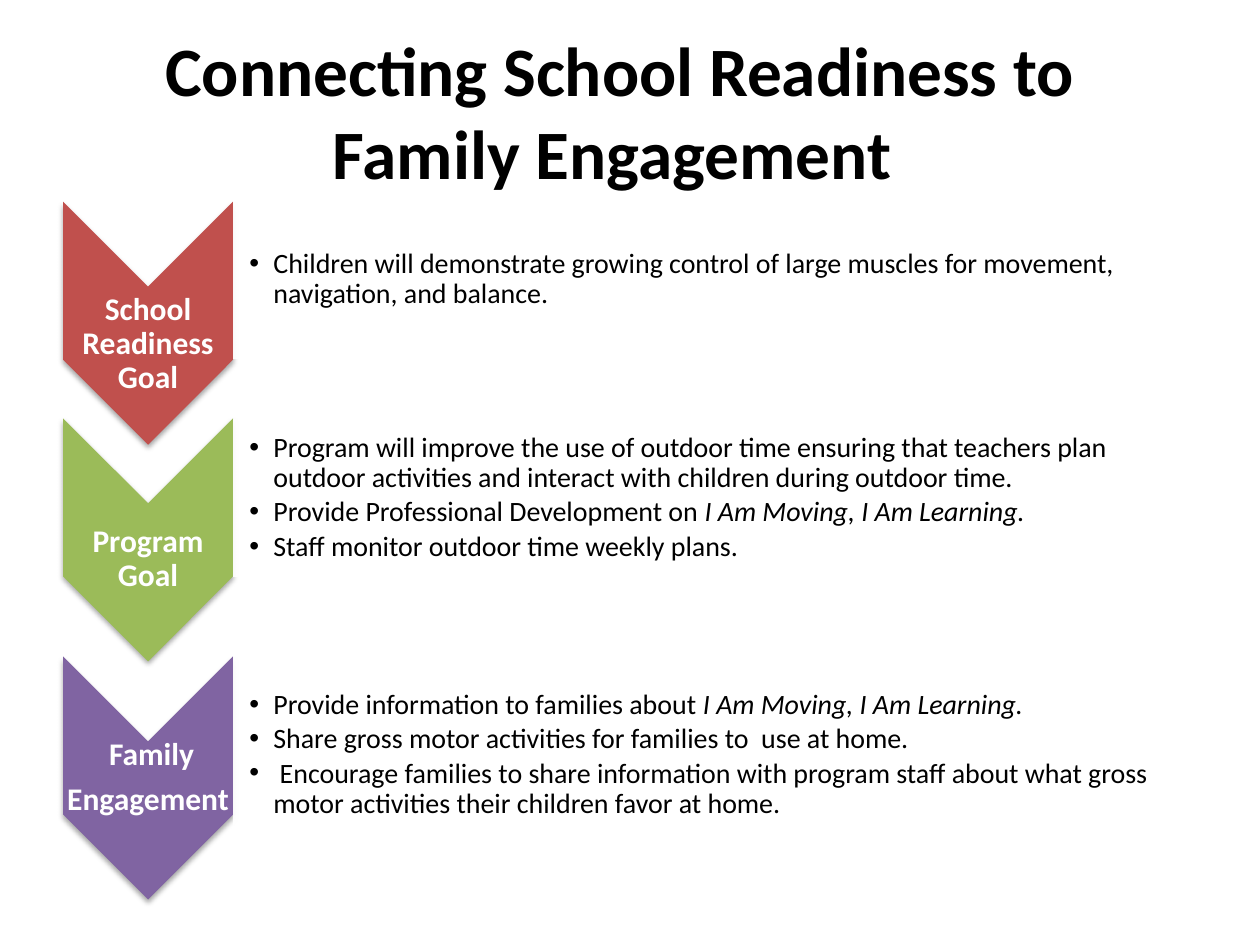
import pptx
import pptx.util
from dataclasses import dataclass
from lxml import etree
from pptx.dml.color import RGBColor
from pptx.enum.shapes import MSO_SHAPE
from pptx.enum.text import MSO_ANCHOR, MSO_AUTO_SIZE, PP_ALIGN
from pptx.oxml.ns import qn

Inches, Pt = pptx.util.Inches, pptx.util.Pt


@dataclass(frozen=True)
class Theme:
    font: str = "Calibri"
    ink: str = "000000"
    label_ink: str = "FFFFFF"
    panel: str = "FFFFFF"
    title: float = 39.6
    label: float = 18
    body: float = 16


THEME = Theme()
TITLE = "Connecting School Readiness to Family Engagement "
PROGRAM = ("I Am Moving, I Am Learning.", True)

# Each bullet is a list of (text, italic) runs; positions are in inches.
STEPS = [
    dict(color="C0504D", top=1.6, label_mid=2.73,
         panel_mid=2.22, panel_h=1.26, list_drop=0,
         label=["School Readiness Goal"],
         bullets=[[("Children will demonstrate growing control of large muscles "
                    "for movement, navigation, and balance.", False)]]),
    dict(color="9BBB59", top=3.32, label_mid=4.44,
         panel_mid=3.95, panel_h=1.26, list_drop=0,
         label=["Program Goal"],
         bullets=[[("Program will improve the use of outdoor time ensuring that "
                    "teachers plan outdoor activities and interact with children "
                    "during outdoor time.", False)],
                  [("Provide Professional Development on ", False), PROGRAM],
                  [("Staff monitor outdoor time weekly plans.", False)]]),
    dict(color="8064A2", top=5.21, label_mid=6.17,
         panel_mid=5.84, panel_h=1.57, list_drop=0.3,
         label=[" Family", "Engagement"],
         bullets=[[("Provide information to families about ", False), PROGRAM],
                  [("Share gross motor activities for families to  use at home.",
                    False)],
                  [(" Encourage families to share information with program staff "
                    "about what gross motor activities their children favor at "
                    "home.", False)]]),
]

LEFT, ARROW_W, ARROW_H = 0.5, 1.35, 1.93
PANEL_LEFT, PANEL_W = LEFT + ARROW_W, 7.4
LIST_W, PANEL_PAD = 7.34, 0.14
LABEL_H = 0.85
INDENT, INSET, LIST_INSET = 0.19, 0.01, 0.13


def place(shape, left, top, width, height):
    shape.left, shape.top = Inches(left), Inches(top)
    shape.width, shape.height = Inches(width), Inches(height)


def prepare_frame(shape, left_inset=INSET, top_inset=INSET):
    tf = shape.text_frame
    tf.word_wrap = True
    tf.auto_size = MSO_AUTO_SIZE.NONE
    tf.vertical_anchor = MSO_ANCHOR.MIDDLE
    tf.margin_left, tf.margin_top = Inches(left_inset), Inches(top_inset)
    tf.margin_right = tf.margin_bottom = Inches(INSET)
    return tf


def add_run(p, text, size, color, bold=False, italic=False):
    r = p.add_run()
    r.text = text
    r.font.name, r.font.size = THEME.font, Pt(size)
    r.font.bold, r.font.italic = bold, italic
    r.font.color.rgb = RGBColor.from_string(color)


def add_paragraph(tf, index, gap):
    """Start a tightly spaced paragraph, with gap points above all but the first."""
    p = tf.paragraphs[0] if index == 0 else tf.add_paragraph()
    p.line_spacing = 0.9
    p.space_before = Pt(gap if index else 0)
    p.space_after = Pt(0)
    return p


def add_bullet(p):
    pPr = p._p.get_or_add_pPr()
    pPr.set("marL", str(Inches(INDENT)))
    pPr.set("indent", str(-Inches(INDENT)))
    etree.SubElement(pPr, qn("a:buFont")).set("typeface", "Arial")
    etree.SubElement(pPr, qn("a:buChar")).set("char", "•")


def add_soft_shadow(shape):
    effects = shape._element.spPr.find(qn("a:effectLst"))
    shadow = etree.SubElement(effects, qn("a:outerShdw"), blurRad=str(Pt(3.1)),
                              dist=str(Pt(1.8)), dir="5400000", rotWithShape="0")
    color = etree.SubElement(shadow, qn("a:srgbClr"), val="000000")
    etree.SubElement(color, qn("a:alpha"), val="35000")


def add_turned_shape(s, kind, left, top, width, height, color):
    """Add a shape turned a quarter clockwise that covers the given area."""
    shift = (height - width) / 2
    shape = s.shapes.add_shape(kind, Inches(left - shift), Inches(top + shift),
                               Inches(height), Inches(width))
    shape.rotation = 90
    shape.fill.solid()
    shape.fill.fore_color.rgb = RGBColor.from_string(color)
    shape.line.fill.background()
    shape.shadow.inherit = False
    return shape


def add_label(s, step):
    box = s.shapes.add_textbox(0, 0, 0, 0)
    place(box, LEFT, step["label_mid"] - LABEL_H / 2, ARROW_W, LABEL_H)
    tf = prepare_frame(box)
    for i, line in enumerate(step["label"]):
        p = add_paragraph(tf, i, 6.3)
        p.alignment = PP_ALIGN.CENTER
        add_run(p, line, THEME.label, THEME.label_ink, bold=True)


def add_panel(s, step):
    panel = add_turned_shape(
        s, MSO_SHAPE.ROUND_2_SAME_RECTANGLE, PANEL_LEFT,
        step["panel_mid"] - step["panel_h"] / 2, PANEL_W, step["panel_h"],
        THEME.panel)
    color = panel._element.spPr.find(qn("a:solidFill"))[0]
    etree.SubElement(color, qn("a:alpha"), val="90000")


def fill_list(s, body, step):
    s.shapes._spTree.append(body._element)  # in front of its panel
    height = step["panel_h"] - PANEL_PAD
    place(body, PANEL_LEFT, step["panel_mid"] - height / 2, LIST_W, height)
    tf = prepare_frame(body, LIST_INSET, INSET + step["list_drop"])
    for i, runs in enumerate(step["bullets"]):
        p = add_paragraph(tf, i, 2.4)
        add_bullet(p)
        for text, italic in runs:
            add_run(p, text, THEME.body, THEME.ink, italic=italic)


def main():
    prs = pptx.Presentation()
    prs.slide_width, prs.slide_height = Inches(10), Inches(7.5)
    s = prs.slides.add_slide(prs.slide_layouts.get_by_name("Comparison"))

    title, *bodies = s.placeholders
    place(title, 0.42, 0.25, 9, 1.25)
    tf = title.text_frame
    tf.auto_size = MSO_AUTO_SIZE.NONE
    tf.vertical_anchor = MSO_ANCHOR.MIDDLE
    tf.paragraphs[0].alignment = PP_ALIGN.CENTER
    add_run(tf.paragraphs[0], TITLE, THEME.title, THEME.ink, bold=True)

    for step, body in zip(STEPS, bodies):
        arrow = add_turned_shape(s, MSO_SHAPE.CHEVRON, LEFT, step["top"],
                                 ARROW_W, ARROW_H, step["color"])
        add_soft_shadow(arrow)
        add_label(s, step)
        add_panel(s, step)
        fill_list(s, body, step)
    for spare in bodies[len(STEPS):]:
        spare._element.getparent().remove(spare._element)

    prs.save("out.pptx")


if __name__ == "__main__":
    main()
